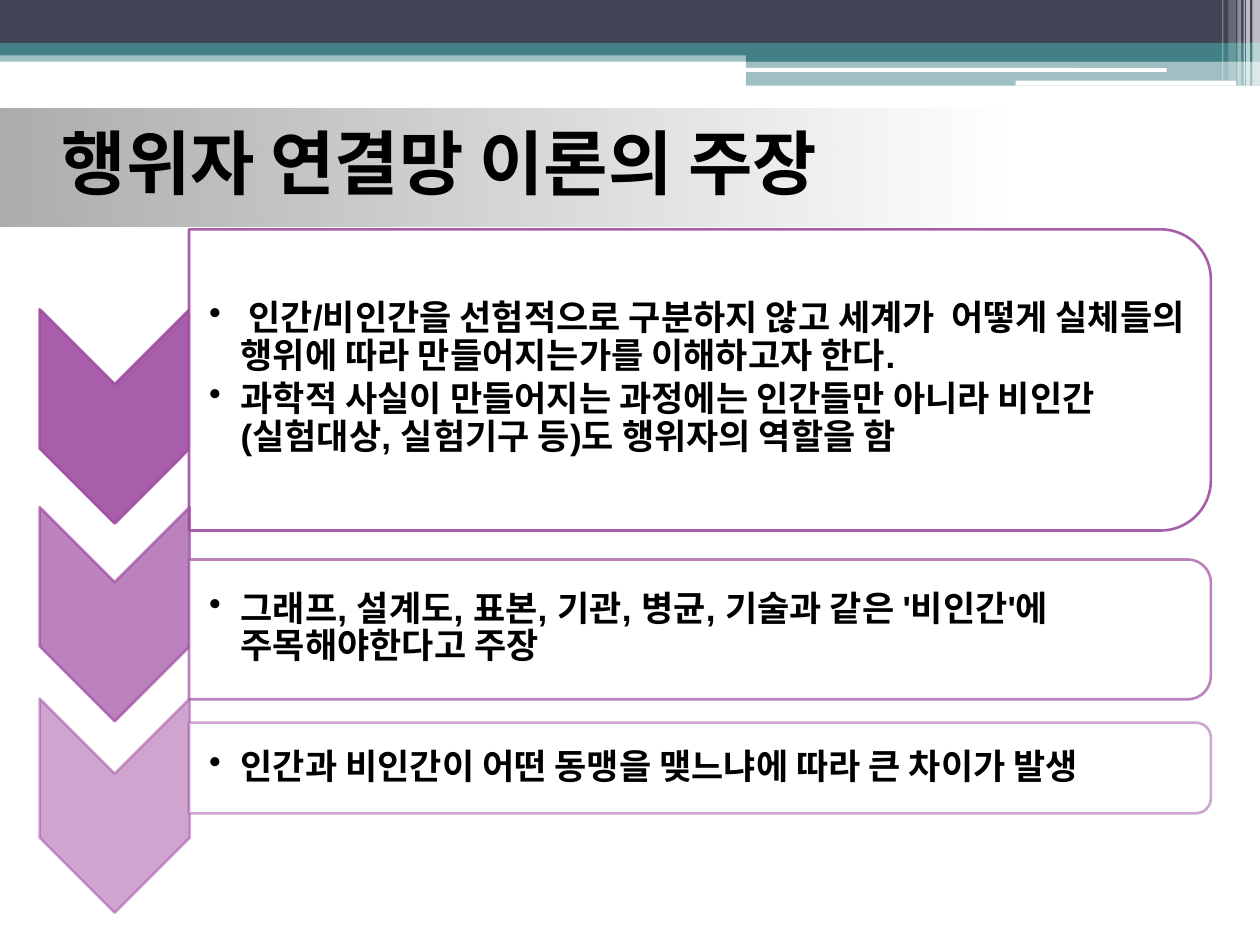
from lxml.etree import SubElement
from pptx import Presentation
from pptx.dml.color import RGBColor as RGB
from pptx.enum.shapes import MSO_SHAPE as Kind
from pptx.enum.text import MSO_ANCHOR as Anchor, PP_ALIGN as Align
from pptx.oxml.ns import qn
from pptx.util import Inches, Pt

# Grid of 100 columns by 75 rows
COLS, ROWS = 100, 75
CELL = Inches(0.1)
FONT = "Arial"
HUE = {"navy": "424456", "teal": "438086", "white": "FFFFFF",
       "plum": "A04DA3", "ink": "000000"}

# Header parts: column, row, columns, rows, colour, opacity
BARS = [
    (0, 4, COLS, 0.9, "teal", 50),
    (0, 0, COLS, 3.4, "navy", 100),
    (0, 3.4, COLS, 1, "teal", 100),
    (59.2, 3.9, 40.8, 1, "teal", 100),
    (59.2, 4.8, 40.8, 2, "teal", 50),
]
PILLS = [(59.1, 5.4, 33.5, 0.3), (80.6, 6.4, 17.5, 0.4)]
# Thin stripes at the right edge: column, columns, rows, opacity
STRIPES = [(99.4, 0.6, 6.8, 65), (98.9, 0.3, 6.8, 65), (98.7, 0.1, 6.8, 60),
           (98.2, 0.3, 6.8, 40), (97.5, 0.6, 6.4, 20), (97, 0.1, 6.4, 30)]

# Steps: opacity, chevron row, card (row, rows), text (row, columns, rows), items
STEPS = [
    (90, 24.55, (18.2, 23.9), (19.3, 79.9, 21.5), [
        " 인간/비인간을 선험적으로 구분하지 않고 세계가  어떻게 실체들의 행위에 "
        "따라 만들어지는가를 이해하고자 한다.",
        "과학적 사실이 만들어지는 과정에는 인간들만 아니라 비인간(실험대상, "
        "실험기구 등)도 행위자의 역할을 함"]),
    (70, 40.25, (44.4, 11.1), (44.9, 80.5, 10), [
        "그래프, 설계도, 표본, 기관, 병균, 기술과 같은 '비인간'에 주목해야한다고 주장"]),
    (50, 55.45, (57.35, 7.2), (57.7, 80.7, 6.5), [
        "인간과 비인간이 어떤 동맹을 맺느냐에 따라 큰 차이가 발생"]),
]


def cells(*nums):
    return [round(n * CELL) for n in nums]


def fade(shape, *shares):
    """Set the opacity of the shape's colours, in order."""
    for tag, share in zip(list(shape.element.iter(qn("a:srgbClr"))), shares):
        if share < 100:
            SubElement(tag, qn("a:alpha")).set("val", str(share * 1000))


def draw(slide, kind, box, hue, share=100, edge=None):
    """Add a shape; edge is its outline opacity, if it has one."""
    shape = slide.shapes.add_shape(kind, *cells(*box))
    shape.shadow.inherit = False
    shape.fill.solid()
    shape.fill.fore_color.rgb = RGB.from_string(HUE[hue])
    if edge:
        shape.line.color.rgb = RGB.from_string(HUE["plum"])
        shape.line.width = Pt(1.5)
    else:
        shape.line.fill.background()
    fade(shape, share, edge or 100)
    return shape


def turn(slide, kind, box, *look):
    """Add a shape that fills the box after a quarter turn."""
    x, y, w, h = box
    shift = (w - h) / 2
    shape = draw(slide, kind, (x + shift, y - shift, h, w), *look)
    shape.rotation = 90


def write(para, text, size):
    run = para.add_run()
    run.text = text
    font = run.font
    font.name, font.size, font.bold = FONT, Pt(size), True
    font.color.rgb = RGB.from_string(HUE["ink"])


def bullet(para):
    props = para._p.get_or_add_pPr()
    props.set("marL", str(Inches(0.25)))
    props.set("indent", str(-Inches(0.25)))
    para.line_spacing = 0.9
    para.space_after = Pt(3)
    SubElement(props, qn("a:buChar")).set("char", "•")


def points(slide, box, items):
    frame = slide.shapes.add_textbox(*cells(*box)).text_frame
    frame.word_wrap = True
    frame.vertical_anchor = Anchor.MIDDLE
    frame.margin_left = Inches(0.16)
    frame.margin_top = frame.margin_right = frame.margin_bottom = Inches(0.01)
    for i, item in enumerate(items):
        para = frame.add_paragraph() if i else frame.paragraphs[0]
        bullet(para)
        write(para, item, 20)


def header(slide):
    for *box, hue, share in BARS:
        draw(slide, Kind.RECTANGLE, box, hue, share)
    for box in PILLS:
        draw(slide, Kind.ROUNDED_RECTANGLE, box, "white")
    for x, w, h, share in STRIPES:
        draw(slide, Kind.RECTANGLE, (x, 0, w, h), "white", share)


def heading(slide, text):
    # Band that fades out to the right
    band = draw(slide, Kind.RECTANGLE, (-20.3, 8.6, 100.8, 9.4), "ink")
    band.fill.gradient()
    band.fill.gradient_angle = 0
    for stop in band.fill.gradient_stops:
        stop.color.rgb = RGB.from_string(HUE["ink"])
    fade(band, 41, 0)
    # Title, brought in front of the band
    title = slide.shapes.title
    title.left, title.top, title.width, title.height = cells(3.9, 7, 90, 11.7)
    frame = title.text_frame
    frame.vertical_anchor = Anchor.MIDDLE
    para = frame.paragraphs[0]
    para.alignment = Align.LEFT
    write(para, text, 40)
    title.element.getparent().append(title.element)


def step(slide, share, top, card, text, items):
    turn(slide, Kind.CHEVRON, (3.15, top, 11.9, 17), "plum", share, share)
    row, rows = card
    turn(slide, Kind.ROUND_2_SAME_RECTANGLE, (15, row, 81.1, rows),
         "white", 90, share)
    row, cols, rows = text
    points(slide, (15, row, cols, rows), items)


def main():
    deck = Presentation()
    deck.slide_width, deck.slide_height = cells(COLS, ROWS)
    slide = deck.slides.add_slide(deck.slide_layouts[5])
    header(slide)
    heading(slide, "행위자 연결망 이론의 주장")
    for parts in STEPS:
        step(slide, *parts)
    deck.save("out.pptx")


if __name__ == "__main__":
    main()
